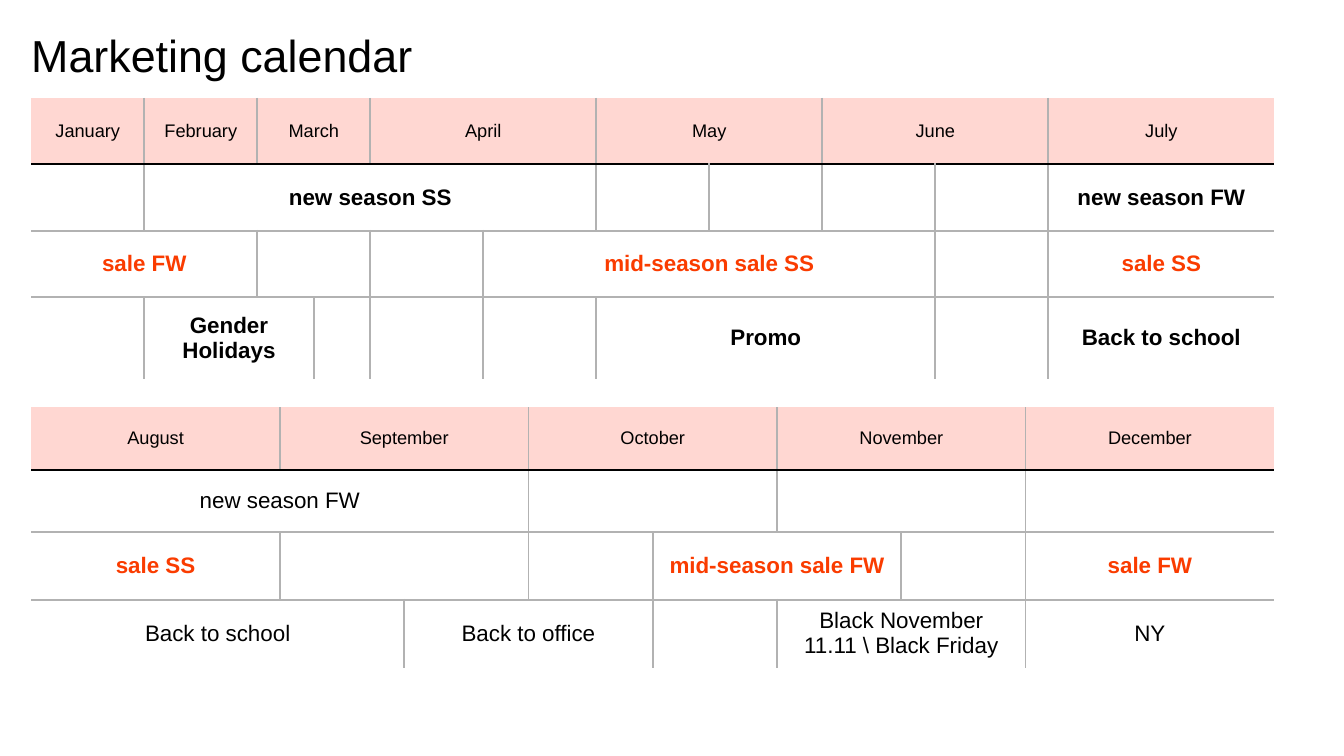
from lxml.etree import SubElement
from pptx import Presentation
from pptx.dml.color import RGBColor
from pptx.enum.text import MSO_ANCHOR, PP_ALIGN
from pptx.oxml.ns import qn
from pptx.util import Inches, Pt

BLACK = RGBColor(0x00, 0x00, 0x00)
GRAY = RGBColor(0xB2, 0xB2, 0xB2)
PINK = RGBColor(0xFF, 0xD7, 0xD2)
ORANGE = RGBColor(0xFA, 0x3C, 0x00)
LEFT, WIDTH = 0.31, 12.33

# Text formats of the calendar rows
MONTH = {"size": Pt(13), "bold": False, "color": BLACK}
PLAIN = {"size": Pt(16), "bold": False, "color": BLACK}
STRONG = {"size": Pt(16), "bold": True, "color": BLACK}
SALE = {"size": Pt(16), "bold": True, "color": ORANGE}

# Each calendar: top, relative column widths, then rows of
# (height, format, [(text, columns spanned)])
CALENDARS = [
    (0.97, [2, 2, 1, 1, 2, 2, 2, 2, 2, 2, 4], [
        (0.66, MONTH, [("January", 1), ("February", 1), ("March", 2), ("April", 2),
                       ("May", 2), ("June", 2), ("July", 1)]),
        (0.66, STRONG, [("", 1), ("new season SS", 5), ("", 1), ("", 1), ("", 1),
                        ("", 1), ("new season FW", 1)]),
        (0.66, SALE, [("sale FW", 2), ("", 2), ("", 1), ("mid-season sale SS", 4),
                      ("", 1), ("sale SS", 1)]),
        (0.81, STRONG, [("", 1), ("Gender Holidays", 2), ("", 1), ("", 1), ("", 1),
                        ("Promo", 3), ("", 1), ("Back to school", 1)]),
    ]),
    (4.04, [2, 1, 1, 1, 1, 1, 1, 2], [
        (0.62, MONTH, [("August", 1), ("September", 2), ("October", 2),
                       ("November", 2), ("December", 1)]),
        (0.62, PLAIN, [("new season FW", 3), ("", 2), ("", 2), ("", 1)]),
        (0.67, SALE, [("sale SS", 1), ("", 2), ("", 1), ("mid-season sale FW", 2),
                      ("", 1), ("sale FW", 1)]),
        (0.67, PLAIN, [("Back to school", 2), ("Back to office", 2), ("", 1),
                       ("Black November\n11.11 \\ Black Friday", 2), ("NY", 1)]),
    ]),
]


def write_text(text_frame, text, text_format, alignment):
    text_frame.text = text
    for paragraph in text_frame.paragraphs:
        paragraph.alignment = alignment
        for run in paragraph.runs:
            run.font.name = "Arial"
            run.font.size = text_format["size"]
            run.font.bold = text_format["bold"]
            run.font.color.rgb = text_format["color"]


def set_borders(cell, colors):
    properties = cell._tc.get_or_add_tcPr()
    for side, color in zip("LRTB", colors):
        line = SubElement(properties, qn(f"a:ln{side}"), w=str(Pt(1.5)))
        if color is None:
            SubElement(line, qn("a:noFill"))
        else:
            fill = SubElement(line, qn("a:solidFill"))
            SubElement(fill, qn("a:srgbClr"), val=str(color))


presentation = Presentation()
presentation.slide_width = Inches(13.33)
presentation.slide_height = Inches(7.5)
slide = presentation.slides.add_slide(presentation.slide_layouts[6])

# Title
title = slide.shapes.add_textbox(Inches(LEFT), Inches(0.25), Inches(12.76), Inches(0.58))
title_format = {"word_wrap": True, "vertical_anchor": MSO_ANCHOR.MIDDLE,
                "margin_left": 0, "margin_right": 0, "margin_top": 0, "margin_bottom": 0}
for name, value in title_format.items():
    setattr(title.text_frame, name, value)
write_text(title.text_frame, "Marketing calendar", {**PLAIN, "size": Pt(32)}, PP_ALIGN.LEFT)

# Calendars
cell_format = {"vertical_anchor": MSO_ANCHOR.MIDDLE,
               "margin_left": Inches(0.13), "margin_right": Inches(0.13),
               "margin_top": Inches(0.07), "margin_bottom": Inches(0.07)}
for top, columns, rows in CALENDARS:
    height = sum(row[0] for row in rows)
    table = slide.shapes.add_table(len(rows), len(columns), Inches(LEFT), Inches(top),
                                   Inches(WIDTH), Inches(height)).table
    table.first_row = False
    table.horz_banding = False
    for column, share in zip(table.columns, columns):
        column.width = Inches(WIDTH * share / sum(columns))

    for row_index, (row_height, text_format, entries) in enumerate(rows):
        table.rows[row_index].height = Inches(row_height)
        above = [None, BLACK, GRAY, GRAY][row_index]
        below = [BLACK, GRAY, GRAY, None][row_index]
        start = 0
        for text, span in entries:
            end = start + span
            # Borders and fill run over every column of the entry
            for index in range(start, end):
                cell = table.cell(row_index, index)
                before = GRAY if index == start and start > 0 else None
                after = GRAY if index == end - 1 and end < len(columns) else None
                set_borders(cell, [before, after, above, below])
                if row_index == 0:
                    cell.fill.solid()
                    cell.fill.fore_color.rgb = PINK
                else:
                    cell.fill.background()
            cell = table.cell(row_index, start)
            if span > 1:
                cell.merge(table.cell(row_index, end - 1))
            for name, value in cell_format.items():
                setattr(cell, name, value)
            write_text(cell.text_frame, text, text_format, PP_ALIGN.CENTER)
            start = end

presentation.save("out.pptx")
